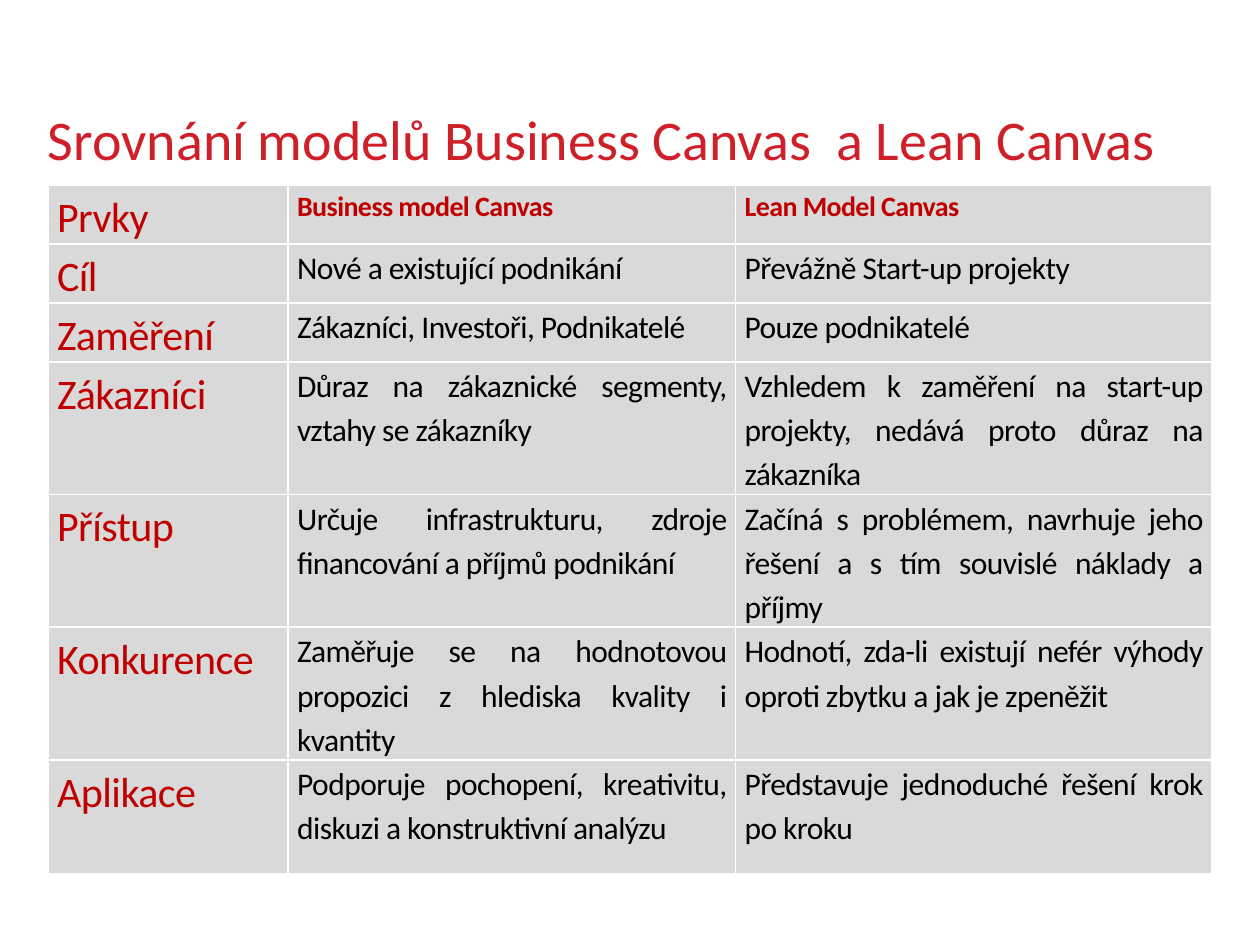
"""Build a slide comparing the Business Canvas and Lean Canvas models."""
from lxml.etree import SubElement
from pptx import Presentation
from pptx.dml.color import RGBColor
from pptx.enum.text import MSO_ANCHOR, PP_ALIGN
from pptx.oxml.ns import qn
from pptx.util import Cm, Pt

TITLE_RED = RGBColor(0xCF, 0x1F, 0x28)
LABEL_RED = RGBColor(0xC0, 0x00, 0x00)
BLACK = RGBColor(0x00, 0x00, 0x00)
GREY = RGBColor(0xD9, 0xD9, 0xD9)
WHITE = RGBColor(0xFF, 0xFF, 0xFF)

TITLE = "Srovnání modelů Business Canvas  a Lean Canvas"
ROWS = [
    ("Prvky", "Business model Canvas", "Lean Model Canvas"),
    ("Cíl", "Nové a existující podnikání", "Převážně Start-up projekty"),
    ("Zaměření", "Zákazníci, Investoři, Podnikatelé", "Pouze podnikatelé"),
    ("Zákazníci", "Důraz na zákaznické segmenty, vztahy se zákazníky",
     "Vzhledem k zaměření na start-up projekty, nedává proto důraz na zákazníka"),
    ("Přístup", "Určuje infrastrukturu, zdroje financování a příjmů podnikání",
     "Začíná s problémem, navrhuje jeho řešení a s tím souvislé náklady a příjmy"),
    ("Konkurence", "Zaměřuje se na hodnotovou propozici z hlediska kvality i kvantity",
     "Hodnotí, zda-li existují nefér výhody oproti zbytku a jak je zpeněžit"),
    ("Aplikace", "Podporuje pochopení, kreativitu, diskuzi a konstruktivní analýzu",
     "Představuje jednoduché řešení krok po kroku"),
]
COLUMN_WIDTHS = [4.84, 9.02, 9.6]
ROW_HEIGHTS = [1, 0.74, 0.74] + [2.3] * 4

LABEL = dict(size=24, color=LABEL_RED)
HEADING = dict(size=16, color=LABEL_RED, bold=True)
BODY = dict(size=18, color=BLACK)


def write(frame, text, size, color, bold=False, align=PP_ALIGN.JUSTIFY,
          line_spacing=1.15, tracking=-30):
    para = frame.paragraphs[0]
    para.alignment = align
    para.line_spacing = line_spacing
    span = para.add_run()
    span.text = text
    span.font.name = "Calibri"
    span.font.size = Pt(size)
    span.font.bold = bold
    span.font.color.rgb = color
    if tracking:
        span.font._element.set("spc", str(tracking))


def format_cell(cell):
    cell.margin_left = cell.margin_right = Cm(0.18)
    cell.margin_top = cell.margin_bottom = 0
    cell.vertical_anchor = MSO_ANCHOR.TOP
    cell.fill.solid()
    cell.fill.fore_color.rgb = GREY
    properties = cell._tc.get_or_add_tcPr()
    for position, side in enumerate(("a:lnL", "a:lnR", "a:lnT", "a:lnB")):
        border = SubElement(properties, qn(side), w=str(Pt(1)))
        fill = SubElement(border, qn("a:solidFill"))
        SubElement(fill, qn("a:srgbClr"), val=str(WHITE))
        properties.insert(position, border)


def main():
    deck = Presentation()
    deck.slide_width, deck.slide_height = Cm(25.4), Cm(19.05)
    page = deck.slides.add_slide(deck.slide_layouts[5])

    title = page.shapes.title
    title.left, title.top = Cm(0.71), Cm(1.07)
    title.width, title.height = Cm(23.19), Cm(3.58)
    title.text_frame.vertical_anchor = MSO_ANCHOR.MIDDLE
    write(title.text_frame, TITLE, size=32, color=TITLE_RED,
          align=PP_ALIGN.LEFT, line_spacing=0.9, tracking=0)

    table = page.shapes.add_table(
        len(ROWS), len(COLUMN_WIDTHS), Cm(0.97), Cm(3.73),
        Cm(sum(COLUMN_WIDTHS)), Cm(sum(ROW_HEIGHTS))).table
    table.first_row = table.horz_banding = False
    for column, width in zip(table.columns, COLUMN_WIDTHS):
        column.width = Cm(width)
    for row, height in zip(table.rows, ROW_HEIGHTS):
        row.height = Cm(height)

    for row_index, texts in enumerate(ROWS):
        for column_index, text in enumerate(texts):
            cell = table.cell(row_index, column_index)
            format_cell(cell)
            if column_index == 0:
                style = LABEL
            else:
                style = BODY if row_index else HEADING
            write(cell.text_frame, text, **style)

    deck.save("out.pptx")


if __name__ == "__main__":
    main()
